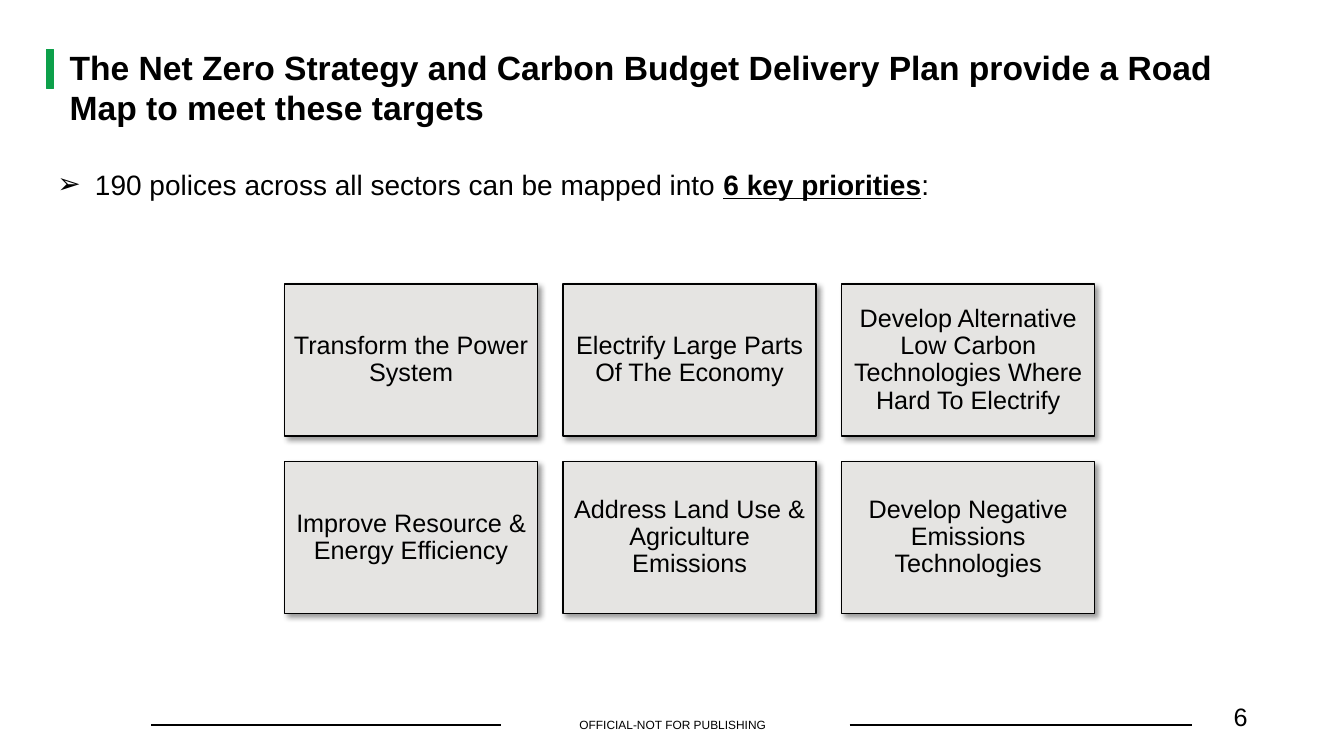
from lxml import etree
from pptx import Presentation
from pptx import util as u
from pptx.dml.color import RGBColor
from pptx.enum import shapes, text
from pptx.oxml import ns

BLACK, GREEN, GREY = "000000", "0DA04A", "E5E4E2"
PRIORITIES = [
    "Transform the Power System",
    "Electrify Large Parts Of The Economy",
    "Develop Alternative Low Carbon Technologies Where Hard To Electrify",
    "Improve Resource & Energy Efficiency",
    "Address Land Use & Agriculture Emissions",
    "Develop Negative Emissions Technologies",
]


def rgb(value):
    return RGBColor.from_string(value)


def add_xml(parent, tag, **attrs):
    el = etree.SubElement(parent, ns.qn(tag))
    for name, value in attrs.items():
        el.set(name, str(value))
    return el


def place(sp, left, top, width, height):
    sp.left, sp.top, sp.width, sp.height = map(u.Cm, (left, top, width, height))


def format_frame(sp, **values):
    tf = sp.text_frame
    values = {"word_wrap": True, "auto_size": text.MSO_AUTO_SIZE.NONE,
              "vertical_anchor": text.MSO_ANCHOR.TOP, **values}
    for name, value in values.items():
        setattr(tf, name, value)
    return tf


def add_run(p, words, size, **values):
    r = p.add_run()
    r.text = words
    for name, value in {"name": "Arial", "size": u.Pt(size), **values}.items():
        setattr(r.font, name, value)
    r.font.color.rgb = rgb(BLACK)


def format_paragraph(p, **values):
    values = {"alignment": text.PP_ALIGN.LEFT, "space_before": u.Pt(0), **values}
    for name, value in values.items():
        setattr(p, name, value)


def add_label(s, words, box, size, align=text.PP_ALIGN.LEFT, **frame):
    sp = s.shapes.add_textbox(*map(u.Cm, box))
    p = format_frame(sp, **frame).paragraphs[0]
    format_paragraph(p, alignment=align)
    add_run(p, words, size)


def add_rect(s, box, fill, line, width):
    sp = s.shapes.add_shape(shapes.MSO_SHAPE.RECTANGLE, *map(u.Cm, box))
    sp.shadow.inherit = False
    sp.fill.solid()
    sp.fill.fore_color.rgb = rgb(fill)
    sp.line.color.rgb = rgb(line)
    sp.line.width = u.Pt(width)
    return sp


def add_shadow(sp):
    effects = sp._element.spPr.find(ns.qn("a:effectLst"))
    shadow = add_xml(effects, "a:outerShdw", blurRad=u.Pt(4), dist=u.Pt(3),
                     dir=45 * 60000, algn="tl", rotWithShape=0)
    add_xml(add_xml(shadow, "a:srgbClr", val=BLACK), "a:alpha", val=40000)


def add_card(s, words, box):
    sp = add_rect(s, box, GREY, BLACK, 1)
    add_shadow(sp)
    margins = {f"margin_{side}": u.Cm(0.18)
               for side in ("left", "right", "top", "bottom")}
    tf = format_frame(sp, vertical_anchor=text.MSO_ANCHOR.MIDDLE, **margins)
    p = tf.paragraphs[0]
    format_paragraph(p, alignment=text.PP_ALIGN.CENTER, line_spacing=0.9)
    add_run(p, words, 18)


def add_rule(s, start, end, y):
    line = s.shapes.add_connector(shapes.MSO_CONNECTOR.STRAIGHT,
                                  u.Cm(start), u.Cm(y), u.Cm(end), u.Cm(y))
    line.line.color.rgb = rgb(BLACK)
    line.line.width = u.Pt(1.5)
    add_xml(line._element.spPr, "a:effectLst")


def fill_title(s):
    sp = s.shapes.title
    place(sp, 1.5, 1.05, 30.35, 2.4)
    p = format_frame(sp).paragraphs[0]
    format_paragraph(p)
    add_run(p, "The Net Zero Strategy and Carbon Budget Delivery Plan provide "
               "a Road Map to meet these targets", 24, bold=True)


def fill_body(s):
    sp = s.placeholders[1]
    place(sp, 1.19, 4.09, 28.83, 1.12)
    p = format_frame(sp).paragraphs[0]
    format_paragraph(p)
    pPr = p._p.get_or_add_pPr()
    pPr.set("marL", str(u.Cm(0.95)))
    pPr.set("indent", str(-u.Cm(0.95)))
    add_xml(pPr, "a:buFont", typeface="Arial")
    add_xml(pPr, "a:buChar", char="➢")
    add_run(p, "190 polices across all sectors can be mapped into ", 20)
    add_run(p, "6 key priorities", 20, bold=True, underline=True)
    add_run(p, ":", 20)


def main():
    prs = Presentation()
    prs.slide_width, prs.slide_height = u.Cm(33.87), u.Cm(19.05)
    s = prs.slides.add_slide(prs.slide_layouts[1])

    # Heading and lead-in
    add_rect(s, (1.17, 1.24, 0.18, 0.99), GREEN, GREEN, 0.75)
    fill_title(s)
    fill_body(s)

    # Grid of priorities
    for i, words in enumerate(PRIORITIES):
        row, col = divmod(i, 3)
        add_card(s, words, (7.17 + 7.02 * col, 7.16 + 4.47 * row, 6.38, 3.83))

    # Footer
    add_rule(s, 3.81, 12.62, 18.26)
    add_rule(s, 21.41, 30.05, 18.26)
    add_label(s, "OFFICIAL-NOT FOR PUBLISHING", (12.98, 18.08, 7.95, 0.36), 8.5,
              text.PP_ALIGN.CENTER, vertical_anchor=text.MSO_ANCHOR.MIDDLE,
              margin_top=0, margin_bottom=0)
    add_label(s, "6", (30.84, 17.55, 1.4, 1.02), 18)

    prs.save("out.pptx")


if __name__ == "__main__":
    main()
